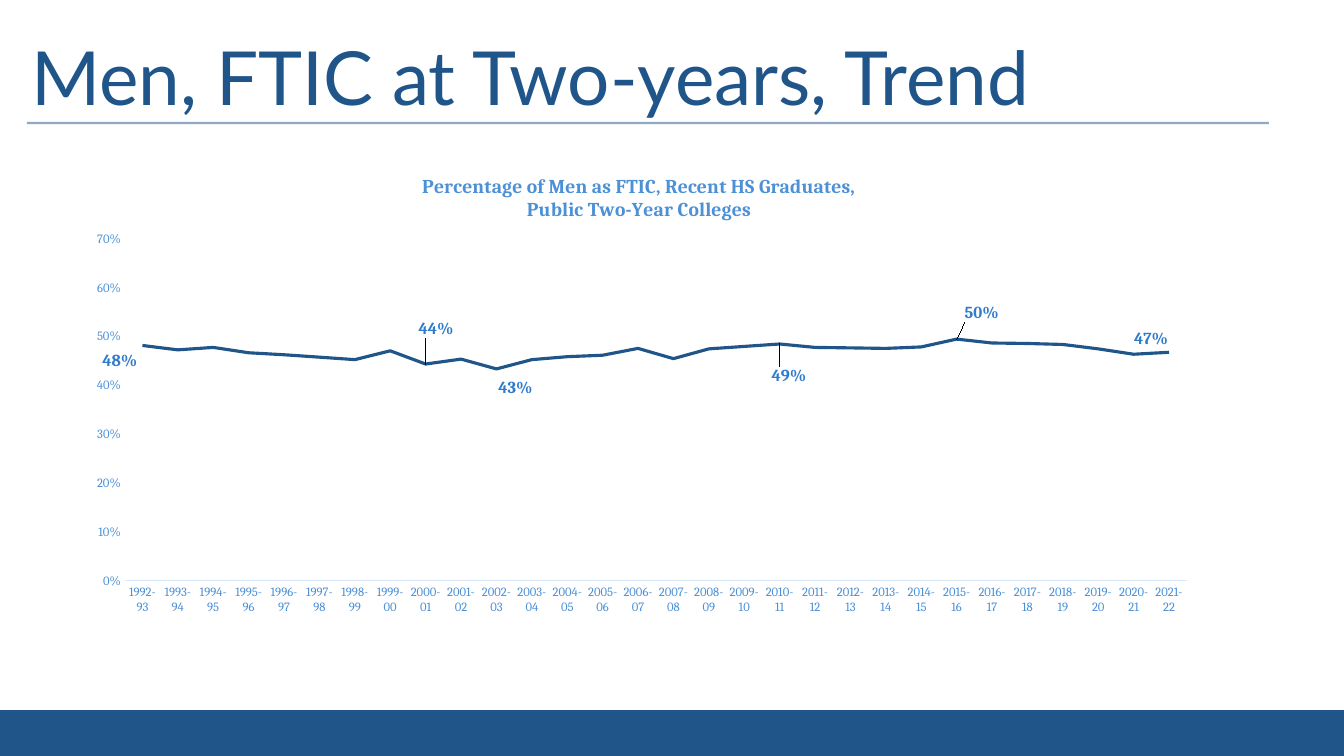
from lxml import etree
from pptx import Presentation
from pptx.chart.data import CategoryChartData
from pptx.dml.color import RGBColor
from pptx.enum.chart import (XL_CHART_TYPE, XL_LABEL_POSITION, XL_MARKER_STYLE,
                             XL_TICK_MARK)
from pptx.enum.shapes import MSO_CONNECTOR, MSO_SHAPE
from pptx.enum.text import MSO_ANCHOR, MSO_AUTO_SIZE, PP_ALIGN
from pptx.oxml import parse_xml
from pptx.oxml.ns import nsdecls, qn
from pptx.util import Emu, Pt

LINE_CHART = XL_CHART_TYPE.LINE
LABEL_RIGHT = XL_LABEL_POSITION.RIGHT
NO_MARKER = XL_MARKER_STYLE.NONE
NO_TICK = XL_TICK_MARK.NONE
STRAIGHT = MSO_CONNECTOR.STRAIGHT
RECTANGLE = MSO_SHAPE.RECTANGLE
MIDDLE = MSO_ANCHOR.MIDDLE
NO_AUTOFIT = MSO_AUTO_SIZE.NONE
LEFT = PP_ALIGN.LEFT

NAVY = RGBColor(0x20, 0x55, 0x8A)
SKY = RGBColor(0x4C, 0x90, 0xD5)
LABEL_BLUE = RGBColor(0x2E, 0x7C, 0xCB)
PALE = RGBColor(0xD6, 0xE5, 0xF5)
C15 = "http://schemas.microsoft.com/office/drawing/2012/chart"

FIRST_YEAR = 1992
MEN_SHARES = [
    0.482, 0.473, 0.478, 0.467, 0.463, 0.458, 0.453, 0.471, 0.444, 0.454,
    0.434, 0.453, 0.459, 0.462, 0.476, 0.455, 0.475, 0.480, 0.485, 0.478,
    0.477, 0.476, 0.479, 0.495, 0.487, 0.486, 0.484, 0.475, 0.464, 0.468,
]
# Year index -> shift of its label in px from the place right of the point
LABEL_SHIFTS = {0: (-44, 16), 8: (-11, -35), 10: (-2, 19),
                18: (-12, 32), 23: (4, -26), 29: (-39, -13)}
CHART_TITLE = ["Percentage of Men as FTIC, Recent HS Graduates,",
               "Public Two-Year Colleges"]


def px(length):
    return Emu(round(length * 914400 / 100.8))


def manual_layout(x, y, size=None, from_edge=False):
    """Layout in fractions of the chart; with a size it places the inner plot."""
    parts = [("x", x), ("y", y)]
    if from_edge:
        parts = [("xMode", "edge"), ("yMode", "edge"), *parts]
    if size:
        parts = [("layoutTarget", "inner"), *parts, ("w", size[0]), ("h", size[1])]
    body = "".join(f'<c:{tag} val="{value}"/>' for tag, value in parts)
    return parse_xml(f'<c:layout {nsdecls("c")}><c:manualLayout>{body}'
                     '</c:manualLayout></c:layout>')


def replace_layout(element, position, layout):
    for old in element.findall(qn("c:layout")):
        element.remove(old)
    element.insert(position, layout)


class TrendSlide:
    def __init__(self, slide, heading_font, chart_font):
        self.slide = slide
        self.heading_font = heading_font
        self.chart_font = chart_font

    def style(self, font, size, color, name, bold=False):
        font.size, font.name, font.bold = Pt(size), name, bold
        font.color.rgb = color

    def bar(self, left, top, width, height):
        band = self.slide.shapes.add_shape(
            RECTANGLE, px(left), px(top), px(width), px(height))
        band.shadow.inherit = False
        band.fill.solid()
        band.fill.fore_color.rgb = NAVY
        band.line.fill.background()

    def rule(self, left, right, y):
        """Half-transparent horizontal line."""
        rule = self.slide.shapes.add_connector(
            STRAIGHT, px(left), px(y), px(right), px(y))
        rule.line.color.rgb = NAVY
        rule.line.width = Pt(1.5)
        properties = rule._element.spPr
        color = properties.find(".//" + qn("a:srgbClr"))
        etree.SubElement(color, qn("a:alpha"), val="50000")
        etree.SubElement(properties, qn("a:effectLst"))

    def title(self, text, left, top, width, height):
        heading = self.slide.shapes.title
        heading.left, heading.top = px(left), px(top)
        heading.width, heading.height = px(width), px(height)
        frame = heading.text_frame
        frame.auto_size = NO_AUTOFIT
        frame.vertical_anchor = MIDDLE
        frame.paragraphs[0].alignment = LEFT
        run = frame.paragraphs[0].add_run()
        run.text = text
        self.style(run.font, 53.3, NAVY, self.heading_font)

    def line_chart(self, left, top, width, height):
        data = CategoryChartData(number_format="0%")
        data.categories = [f"{year}-{(year + 1) % 100:02d}" for year in
                           range(FIRST_YEAR, FIRST_YEAR + len(MEN_SHARES))]
        data.add_series("Men", MEN_SHARES)
        chart = self.slide.shapes.add_chart(
            LINE_CHART, px(left), px(top), px(width), px(height), data).chart
        self.style(chart.font, 10, NAVY, self.chart_font)
        chart.has_legend = False
        plot = chart.plots[0]
        plot.vary_by_categories = False
        replace_layout(chart._chartSpace.chart.plotArea, 0,
                       manual_layout(0.076, 0.162, (0.88, 0.637), from_edge=True))
        self.chart_title(chart)
        self.axes(chart)
        series = plot.series[0]
        series.smooth = False
        series.format.line.color.rgb = NAVY
        series.format.line.width = Pt(2.25)
        series.marker.style = NO_MARKER
        self.point_labels(series, width, height)

    def chart_title(self, chart):
        chart.has_title = True
        title = chart.chart_title
        frame = title.text_frame
        for number, text in enumerate(CHART_TITLE):
            paragraph = frame.add_paragraph() if number else frame.paragraphs[0]
            run = paragraph.add_run()
            run.text = text
            self.style(run.font, 14, SKY, self.chart_font, bold=True)
        replace_layout(title._element, 1, manual_layout(0.32, 0.035, from_edge=True))

    def axes(self, chart):
        years, shares = chart.category_axis, chart.value_axis
        for axis in (years, shares):
            axis.major_tick_mark = axis.minor_tick_mark = NO_TICK
            axis.has_major_gridlines = False
            self.style(axis.tick_labels.font, 9, SKY, self.chart_font)
        years.format.line.color.rgb = PALE
        years.format.line.width = Pt(0.75)
        shares.format.line.fill.background()
        shares.minimum_scale, shares.maximum_scale = 0, 0.7
        shares.major_unit = 0.1
        shares.tick_labels.number_format = "0%"
        shares.tick_labels.number_format_is_linked = False

    def point_labels(self, series, width, height):
        """Label the chosen years, with leader lines to the shifted labels."""
        labels = series.data_labels
        labels.show_value = False
        for index, (dx, dy) in LABEL_SHIFTS.items():
            label = series.points[index].data_label
            self.style(label.font, 12, LABEL_BLUE, self.chart_font, bold=True)
            label.position = LABEL_RIGHT
            element = labels._element.xpath(f'c:dLbl[c:idx/@val="{index}"]')[0]
            replace_layout(element, 1, manual_layout(round(dx / width, 4),
                                                     round(dy / height, 4)))
        labels._element.append(parse_xml(
            f'<c:extLst {nsdecls("c")}>'
            f'<c:ext uri="{{CE6537A1-D6FC-4f65-9D91-7224C49458BB}}" xmlns:c15="{C15}">'
            '<c15:showLeaderLines val="1"/></c:ext></c:extLst>'))


def main():
    deck = Presentation()
    deck.slide_width, deck.slide_height = px(1344), px(756)
    trend = TrendSlide(deck.slides.add_slide(deck.slide_layouts[5]),
                       "Lato", "Cambria")
    trend.bar(-2, 710, 1346, 46)
    trend.rule(27, 1269, 123)
    trend.title("Men, FTIC at Two-years, Trend", 21, 31, 1219, 90)
    trend.line_chart(33, 152, 1207, 537)
    deck.save("out.pptx")


if __name__ == "__main__":
    main()
